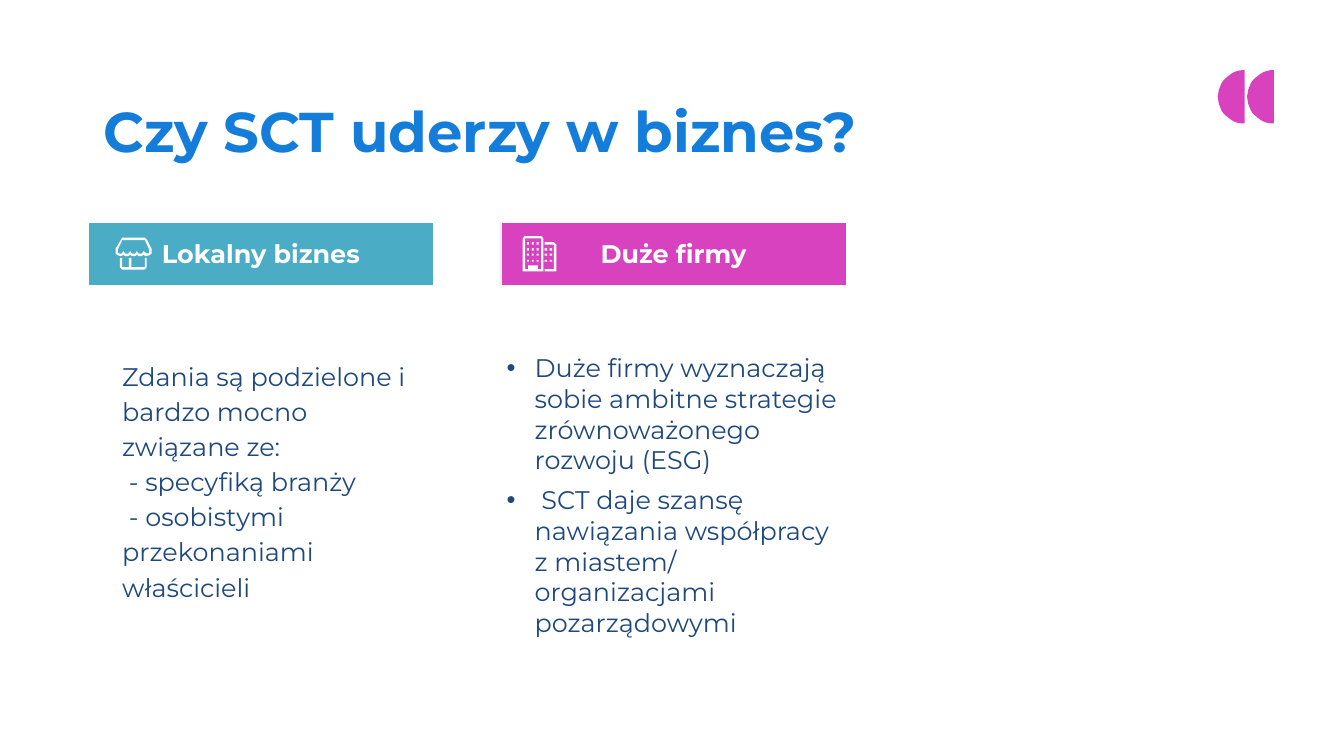
import math

import pptx
import pptx.dml.color
import pptx.enum.shapes
import pptx.enum.text
import pptx.oxml
import pptx.oxml.ns
import pptx.util

Cm = pptx.util.Cm
Pt = pptx.util.Pt
RGBColor = pptx.dml.color.RGBColor
Align = pptx.enum.text.PP_ALIGN
Anchor = pptx.enum.text.MSO_ANCHOR

WHITE = RGBColor(0xFF, 0xFF, 0xFF)
BLUE = RGBColor(0x14, 0x7D, 0xD9)
NAVY = RGBColor(0x1F, 0x49, 0x7D)
TEAL = RGBColor(0x4B, 0xAC, 0xC6)
PINK = RGBColor(0xD9, 0x42, 0xBF)
FONT = "Montserrat"
UNIT = Cm(2.54) / 100

LOCAL = [
    "Zdania są podzielone i bardzo mocno związane ze:\n"
    " - specyfiką branży\n"
    " - osobistymi przekonaniami właścicieli"
]
LARGE = [
    "Duże firmy wyznaczają sobie ambitne strategie zrównoważonego rozwoju (ESG)",
    " SCT daje szansę nawiązania współpracy z miastem/ organizacjami pozarządowymi",
]


def style(para, size, color, bold=False):
    for run in para.runs:
        font = run.font
        font.name = FONT
        font.size = Pt(size)
        font.bold = bold
        font.color.rgb = color


def indent(para, left, first=0):
    props = para._p.get_or_add_pPr()
    props.set("marL", str(Cm(left)))
    props.set("indent", str(Cm(first)))
    return props


def bullet(para):
    props = indent(para, 1.27, -1.17)
    space = pptx.oxml.ns.nsdecls("a")
    for tag in (
        f'<a:buClr {space}><a:srgbClr val="{NAVY}"/></a:buClr>',
        f'<a:buFont {space} typeface="Arial"/>',
        f'<a:buChar {space} char="•"/>',
    ):
        props.append(pptx.oxml.parse_xml(tag))


def add_title(slide, left, top, width, height):
    title = slide.shapes.title
    title.left, title.top, title.width, title.height = left, top, width, height
    frame = title.text_frame
    frame.text = "Czy SCT uderzy w biznes?"
    frame.auto_size = pptx.enum.text.MSO_AUTO_SIZE.NONE
    frame.vertical_anchor = Anchor.TOP
    frame.margin_left = frame.margin_right = frame.margin_bottom = 0
    frame.margin_top = Cm(0.03)
    para = frame.paragraphs[0]
    para.alignment = Align.LEFT
    style(para, 66, BLUE, True)


def add_box(slide, left, top, width, height, fill):
    box = slide.shapes.add_shape(
        pptx.enum.shapes.MSO_SHAPE.RECTANGLE, left, top, width, height)
    box.shadow.inherit = False
    box.fill.solid()
    box.fill.fore_color.rgb = fill
    box.line.color.rgb = WHITE
    box.line.width = Pt(0.75)
    frame = box.text_frame
    frame.word_wrap = True
    frame.vertical_anchor = Anchor.MIDDLE
    frame.margin_left = frame.margin_right = Cm(0.25)
    frame.margin_top = frame.margin_bottom = Cm(0.25)
    return frame


def add_head(slide, left, top, text, fill):
    frame = add_box(slide, left, top, Cm(14.33), Cm(2.59), fill)
    frame.text = text
    para = frame.paragraphs[0]
    para.alignment = Align.CENTER
    style(para, 30, WHITE, True)


def add_body(slide, left, top, texts):
    frame = add_box(slide, left, top, Cm(14.33), Cm(15.29), WHITE)
    for index, text in enumerate(texts):
        para = frame.add_paragraph() if index else frame.paragraphs[0]
        para.text = text
        para.alignment = Align.LEFT
        style(para, 30, NAVY)
    return frame


def add_local(slide, left, top):
    add_body(slide, left, top + Cm(3.02), LOCAL)
    add_head(slide, left + Cm(0.12), top, "Lokalny biznes", TEAL)
    draw(slide, left + Cm(1.24), top + Cm(0.63), shop(), WHITE)


def add_large(slide, left, top):
    frame = add_body(slide, left, top + Cm(3.02), LARGE)
    frame.vertical_anchor = Anchor.TOP
    frame.margin_top = Cm(2.38)
    for para in frame.paragraphs:
        bullet(para)
    frame.paragraphs[1].space_before = Pt(11.5)
    para = add_head(slide, left + Cm(0.12), top, "Duże firmy", PINK)
    draw(slide, left + Cm(1.02), top + Cm(0.56), office(), WHITE)


def draw(slide, left, top, loops, fill):
    """Fill closed loops of points, in UNIT steps, as one shape."""
    first, *rest = loops
    pen = slide.shapes.build_freeform(*first[0], scale=UNIT)
    pen.add_line_segments(first[1:], close=True)
    for loop in rest:
        pen.move_to(*loop[0])
        pen.add_line_segments(loop[1:], close=True)
    shape = pen.convert_to_shape(left, top)
    shape.shadow.inherit = False
    shape.fill.solid()
    shape.fill.fore_color.rgb = fill
    shape.line.fill.background()


def quote():
    radius = 43.5
    angles = [math.pi * (0.5 + step / 24) for step in range(25)]
    return [[(edge + radius * math.cos(a), radius - radius * math.sin(a))
             for a in angles] for edge in (44, 92)]


def wave(top, depth):
    """Scalloped lower edge of the awning, from right to left."""
    points = [(46, top)]
    for left in (35, 24, 13):
        points += [(left + 8, top + depth), (left + 3, top + depth), (left, top)]
    return points


def shop():
    outer = [(11, 0), (48, 0), (52, 4), (59, 18), (59, 26), (55, 29), (49, 30)]
    outer += wave(28, 2) + [(9, 30), (4, 29), (0, 26), (0, 18)]
    inner = [(11, 4), (48, 4), (55, 19), (55, 25), (51, 26)]
    inner += wave(22, 4) + [(10, 26), (7, 26), (4, 25), (4, 19)]
    base = [(51, 33), (51, 48), (48, 52), (11, 52), (7, 48), (7, 33), (11, 33),
            (11, 48), (22, 48), (22, 33), (26, 33), (26, 48), (48, 48), (48, 33)]
    return [outer, inner, base]


def office():
    tower = [(0, 58), (0, 5), (2, 1), (4, 0), (30, 0), (32, 1), (34, 5), (34, 58)]
    inside = [(4, 4), (30, 4), (30, 54), (25, 54), (25, 48), (9, 48), (9, 54), (4, 54)]
    wing = [(36, 10), (51, 10), (55, 14), (55, 58), (36, 58), (36, 54),
            (51, 54), (51, 14), (36, 14)]
    spots = [(x, y) for x in (7, 15, 23) for y in (10, 20, 29, 39)]
    spots += [(x, y) for x in (36, 44) for y in (20, 29, 39)]
    panes = [[(x, y), (x + 3.5, y), (x + 3.5, y + 3.5), (x, y + 3.5)]
             for x, y in spots]
    return [tower, inside, wing] + panes


def main():
    deck = pptx.Presentation()
    deck.slide_width, deck.slide_height = Cm(55.85), Cm(31.42)
    slide = deck.slides.add_slide(deck.slide_layouts.get_by_name("Title Only"))
    draw(slide, Cm(50.6), Cm(2.92), quote(), PINK)
    add_title(slide, Cm(4.32), Cm(3.96), Cm(32.72), Cm(2.84))
    add_local(slide, Cm(3.56), Cm(9.25))
    add_large(slide, Cm(20.7), Cm(9.25))
    body = slide.shapes[2].text_frame.paragraphs[0]
    indent(body, 1.27)
    body.line_spacing = 1.15
    deck.save("out.pptx")


if __name__ == "__main__":
    main()
